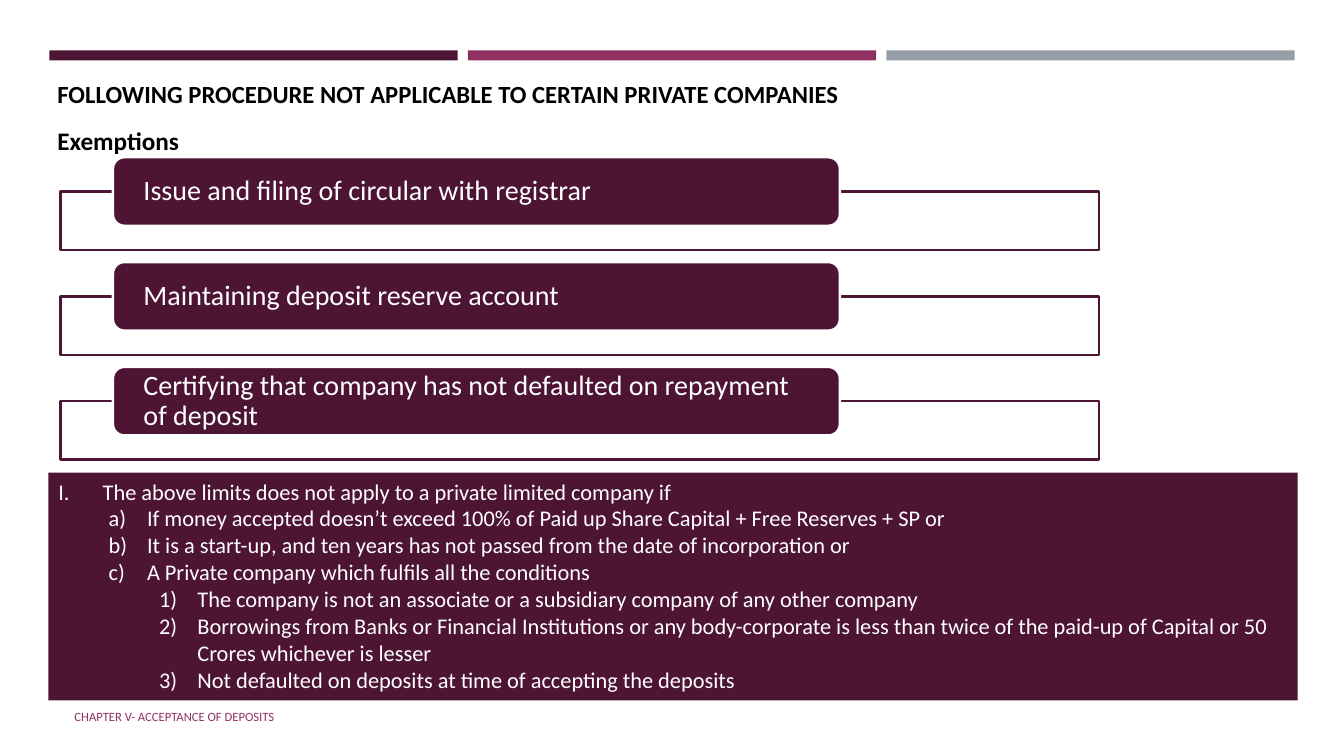
from pptx import Presentation
from pptx.dml.color import RGBColor
from pptx.enum import shapes as sh, text as tx
from pptx.oxml.ns import qn
from pptx.util import Inches, Pt
from lxml import etree

PLUM = RGBColor(0x4D, 0x14, 0x34)
MAGENTA = RGBColor(0x90, 0x31, 0x63)
GREY = RGBColor(0x96, 0x9F, 0xA7)
WHITE = RGBColor(0xFF, 0xFF, 0xFF)
BLACK = RGBColor(0, 0, 0)
FONT = "Calibri"

# Content
TITLE = "FOLLOWING PROCEDURE NOT APPLICABLE TO CERTAIN PRIVATE COMPANIES"
SUBTITLE = "Exemptions"
FOOTER = "CHAPTER V- ACCEPTANCE OF DEPOSITS"
EXEMPTIONS = [
    "Issue and filing of circular with registrar",
    "Maintaining deposit reserve account",
    "Certifying that company has not defaulted on repayment of deposit",
]
CONDITIONS = [  # (level, text)
    (0, "The above limits does not apply to a private limited company if"),
    (1, "If money accepted doesn’t exceed 100% of Paid up Share Capital + Free Reserves + SP or"),
    (1, "It is a start-up, and ten years has not passed from the date of incorporation or"),
    (1, "A Private company which fulfils all the conditions"),
    (2, "The company is not an associate or a subsidiary company of any other company"),
    (2, "Borrowings from Banks or Financial Institutions or any body-corporate is less than "
        "twice of the paid-up of Capital or 50 Crores whichever is lesser"),
    (2, "Not defaulted on deposits at time of accepting the deposits"),
]
# Per level: numbering scheme, left margin, hanging indent
NUMBERING = [
    ("romanUcPeriod", 0.44, 0.44),
    ("alphaLcParenR", 0.88, 0.38),
    ("arabicParenR", 1.38, 0.38),
]

prs = Presentation()
prs.slide_width, prs.slide_height = Inches(13.33), Inches(7.5)
slide = prs.slides.add_slide(prs.slide_layouts[6])


def add_box(box, fill, line=None, kind=sh.MSO_SHAPE.RECTANGLE):
    shape = slide.shapes.add_shape(kind, *map(Inches, box))
    shape.shadow.inherit = False
    shape.fill.solid()
    shape.fill.fore_color.rgb = fill
    if line is None:
        shape.line.fill.background()
    else:
        shape.line.color.rgb = line
        shape.line.width = Pt(1.75)
    return shape


def write(shape, lines, size, color, bold=False, anchor=tx.MSO_ANCHOR.TOP,
          spacing=None, insets=(0.1, 0.05)):
    """Fill a shape with lines, each a string or a (level, string) pair."""
    frame = shape.text_frame
    frame.word_wrap = True
    frame.vertical_anchor = anchor
    frame.margin_left = frame.margin_right = Inches(insets[0])
    frame.margin_top = frame.margin_bottom = Inches(insets[1])
    for i, line in enumerate(lines):
        para = frame.paragraphs[0] if i == 0 else frame.add_paragraph()
        para.alignment = tx.PP_ALIGN.LEFT
        if spacing:
            para.line_spacing = spacing
        if isinstance(line, tuple):
            level, line = line
            number(para, level)
        run = para.add_run()
        run.text = line
        run.font.name, run.font.size, run.font.bold = FONT, Pt(size), bold
        run.font.color.rgb = color


def number(para, level):
    scheme, margin, hanging = NUMBERING[level]
    para.level = level
    props = para._p.get_or_add_pPr()
    props.set("marL", str(Inches(margin)))
    props.set("indent", str(-Inches(hanging)))
    etree.SubElement(props, qn("a:buFont"), typeface="+mj-lt")
    etree.SubElement(props, qn("a:buAutoNum"), type=scheme)


def add_label(box, label, size, color, **fmt):
    write(slide.shapes.add_textbox(*map(Inches, box)), [label], size, color, **fmt)


# Top bars
for i, bar_color in enumerate((PLUM, MAGENTA, GREY)):
    add_box((0.49 + 4.15 * i, 0.5, 4.05, 0.1), bar_color)

# Headings and footer
add_label((0.47, 0.73, 12.06, 0.42), TITLE, 17.6, BLACK, bold=True)
add_label((0.47, 1.19, 6.67, 0.4), SUBTITLE, 18, BLACK, bold=True)
add_label((0.64, 6.91, 7.56, 0.4), FOOTER, 9, MAGENTA, anchor=tx.MSO_ANCHOR.MIDDLE)

# Exemption list: an outlined strip behind each rounded heading
for i, exemption in enumerate(EXEMPTIONS):
    top = 1.56 + 1.04 * i
    add_box((0.6, top + 0.34, 10.3, 0.58), WHITE, PLUM)
    heading = add_box((1.12, top, 7.21, 0.68), PLUM, WHITE, sh.MSO_SHAPE.ROUNDED_RECTANGLE)
    write(heading, [exemption], 20, WHITE, anchor=tx.MSO_ANCHOR.MIDDLE,
          spacing=0.9, insets=(0.27, 0))

# Conditions panel
panel = add_box((0.48, 4.69, 12.39, 2.26), PLUM)
write(panel, CONDITIONS, 16, WHITE)

prs.save("out.pptx")
